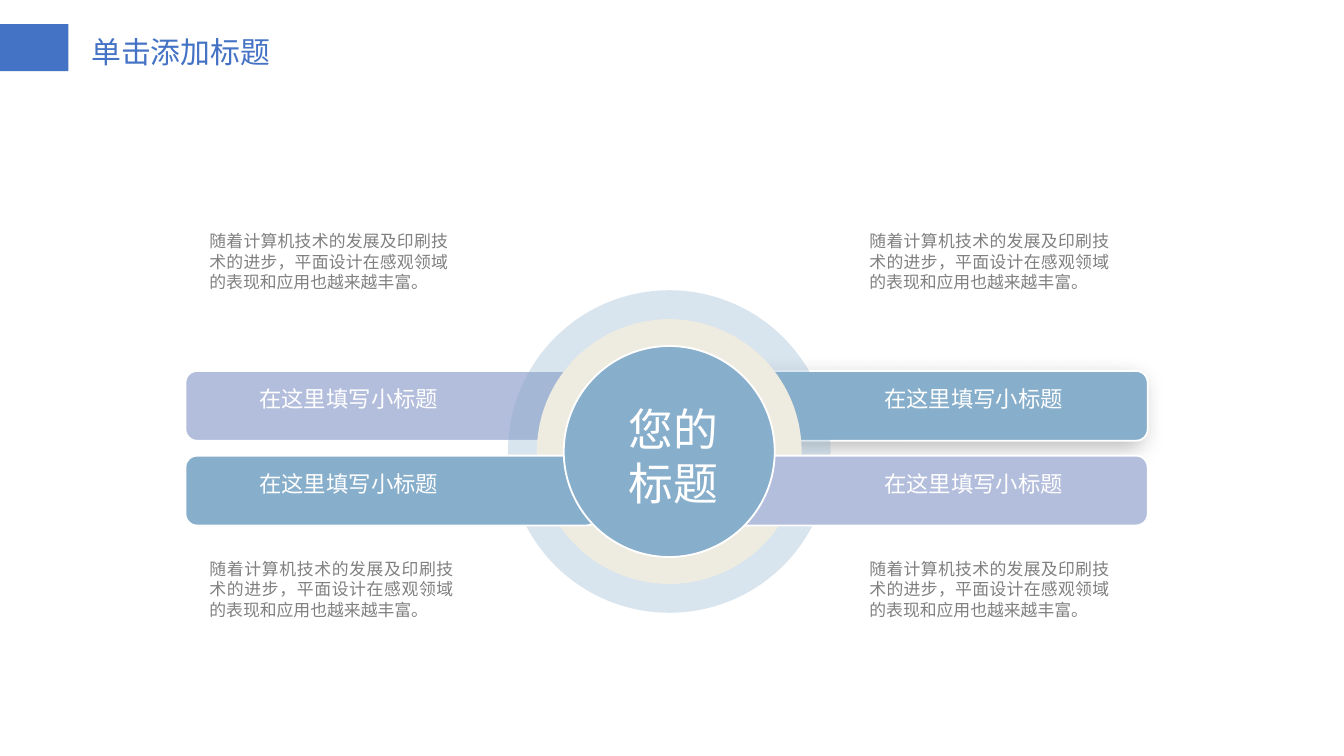
"""Build a slide with a central circle, four labelled bars and four notes."""
import pptx
import pptx.util
import pptx.dml.color
import pptx.enum.shapes
import pptx.enum.text
import pptx.oxml
import pptx.oxml.ns

Inches, Pt = pptx.util.Inches, pptx.util.Pt
RGBColor = pptx.dml.color.RGBColor
SHAPE = pptx.enum.shapes.MSO_SHAPE
ALIGN = pptx.enum.text.PP_ALIGN
ANCHOR = pptx.enum.text.MSO_ANCHOR
AUTO = pptx.enum.text.MSO_AUTO_SIZE
qn = pptx.oxml.ns.qn

FONT = "Noto Sans CJK SC"
ACCENT = RGBColor(0x44, 0x72, 0xC4)
BLUE = RGBColor(0x87, 0xAE, 0xCB)
LILAC = RGBColor(0xB3, 0xBD, 0xDC)
CREAM = RGBColor(0xEE, 0xEC, 0xE1)
GRAY = RGBColor(0x80, 0x80, 0x80)
WHITE = RGBColor(0xFF, 0xFF, 0xFF)

TITLE = "单击添加标题"
CENTER = "您的标题"
LABEL = "在这里填写小标题"
NOTE = "随着计算机技术的发展及印刷技术的进步，平面设计在感观领域的表现和应用也越来越丰富。"

SLIDE_W = 10
SLIDE_H = SLIDE_W * 9 / 16
BAR_W, BAR_H = 3.07, 0.52
LEFT_X, RIGHT_X = 1.38, 5.47
LABEL_X = {LEFT_X: 1.14, RIGHT_X: 5.79}
TOP_Y, BOTTOM_Y = 2.76, 3.39
UPPER_BARS = [(RIGHT_X, TOP_Y, BLUE), (LEFT_X, TOP_Y, LILAC)]
LOWER_BARS = [(RIGHT_X, BOTTOM_Y, LILAC), (LEFT_X, BOTTOM_Y, BLUE)]
CENTER_X, CENTER_Y = 4.98, 3.36
NOTES = [(1.46, 4.11, 2.01), (6.37, 4.11, 1.98), (6.37, 1.67, 1.98), (1.46, 1.67, 1.97)]


def write(tf, text, size, color, align):
    tf.word_wrap = True
    p = tf.paragraphs[0]
    p.alignment = align
    r = p.add_run()
    r.text = text
    r.font.size = Pt(size)
    r.font.name = FONT
    r.font.color.rgb = color
    ea = r.font._element.makeelement(qn("a:ea"), {"typeface": FONT})
    r.font._element.find(qn("a:latin")).addnext(ea)


def add_text(s, x, y, w, h, text, size, color, align):
    sp = s.shapes.add_textbox(Inches(x), Inches(y), Inches(w), Inches(h))
    write(sp.text_frame, text, size, color, align)


def add_shape(s, kind, x, y, w, h, fill, line=None):
    sp = s.shapes.add_shape(kind, Inches(x), Inches(y), Inches(w), Inches(h))
    sp.shadow.inherit = False
    sp.fill.solid()
    sp.fill.fore_color.rgb = fill
    if line is None:
        sp.line.fill.background()
    else:
        sp.line.color.rgb = line
        sp.line.width = Pt(1)
    return sp


def add_bar(s, x, y, fill):
    sp = add_shape(s, SHAPE.ROUNDED_RECTANGLE, x, y, BAR_W, BAR_H, fill, WHITE)
    add_text(s, LABEL_X[x], y + 0.06, 2.91, 0.3, LABEL, 12, WHITE, ALIGN.CENTER)
    return sp


def add_circle(s, diameter, fill, line=None):
    x, y = CENTER_X - diameter / 2, CENTER_Y - diameter / 2
    return add_shape(s, SHAPE.OVAL, x, y, diameter, diameter, fill, line)


def add_shadow(sp):
    sp._element.spPr.find(qn("a:effectLst")).append(pptx.oxml.parse_xml(
        '<a:outerShdw xmlns:a="http://schemas.openxmlformats.org/drawingml/2006/main" '
        f'blurRad="{Pt(12)}" dist="{Pt(5)}" dir="{135 * 60000}" rotWithShape="0">'
        '<a:srgbClr val="000000"><a:alpha val="26000"/></a:srgbClr></a:outerShdw>'))


def add_title(s):
    sp = s.shapes.title
    sp.left, sp.top, sp.width, sp.height = map(Inches, (0.6, 0.21, 1.5, 0.35))
    tf = sp.text_frame
    tf.margin_left = tf.margin_right = Inches(0.08)
    tf.margin_top = tf.margin_bottom = Inches(0.04)
    tf.vertical_anchor = ANCHOR.TOP
    write(tf, TITLE, 16, ACCENT, ALIGN.LEFT)
    tf.auto_size = AUTO.NONE
    tf.word_wrap = False


def main():
    prs = pptx.Presentation()
    prs.slide_width, prs.slide_height = Inches(SLIDE_W), Inches(SLIDE_H)
    s = prs.slides.add_slide(prs.slide_layouts[5])

    add_title(s)
    add_shape(s, SHAPE.RECTANGLE, 0, 0.18, 0.51, 0.35, ACCENT)

    bars = [add_bar(s, *bar) for bar in UPPER_BARS]
    add_shadow(bars[0])

    halo = add_circle(s, 2.4, BLUE)
    color = halo._element.spPr.find(qn("a:solidFill"))[0]
    color.append(color.makeelement(qn("a:alpha"), {"val": "32000"}))
    add_circle(s, 1.97, CREAM)

    for bar in LOWER_BARS:
        add_bar(s, *bar)

    add_circle(s, 1.57, BLUE, WHITE)
    add_text(s, 4.58, 2.94, 0.96, 0.91, CENTER, 24, WHITE, ALIGN.LEFT)

    for x, y, w in NOTES:
        add_text(s, x, y, w, 0.56, NOTE, 9, GRAY, ALIGN.JUSTIFY)

    prs.save("out.pptx")


if __name__ == "__main__":
    main()
